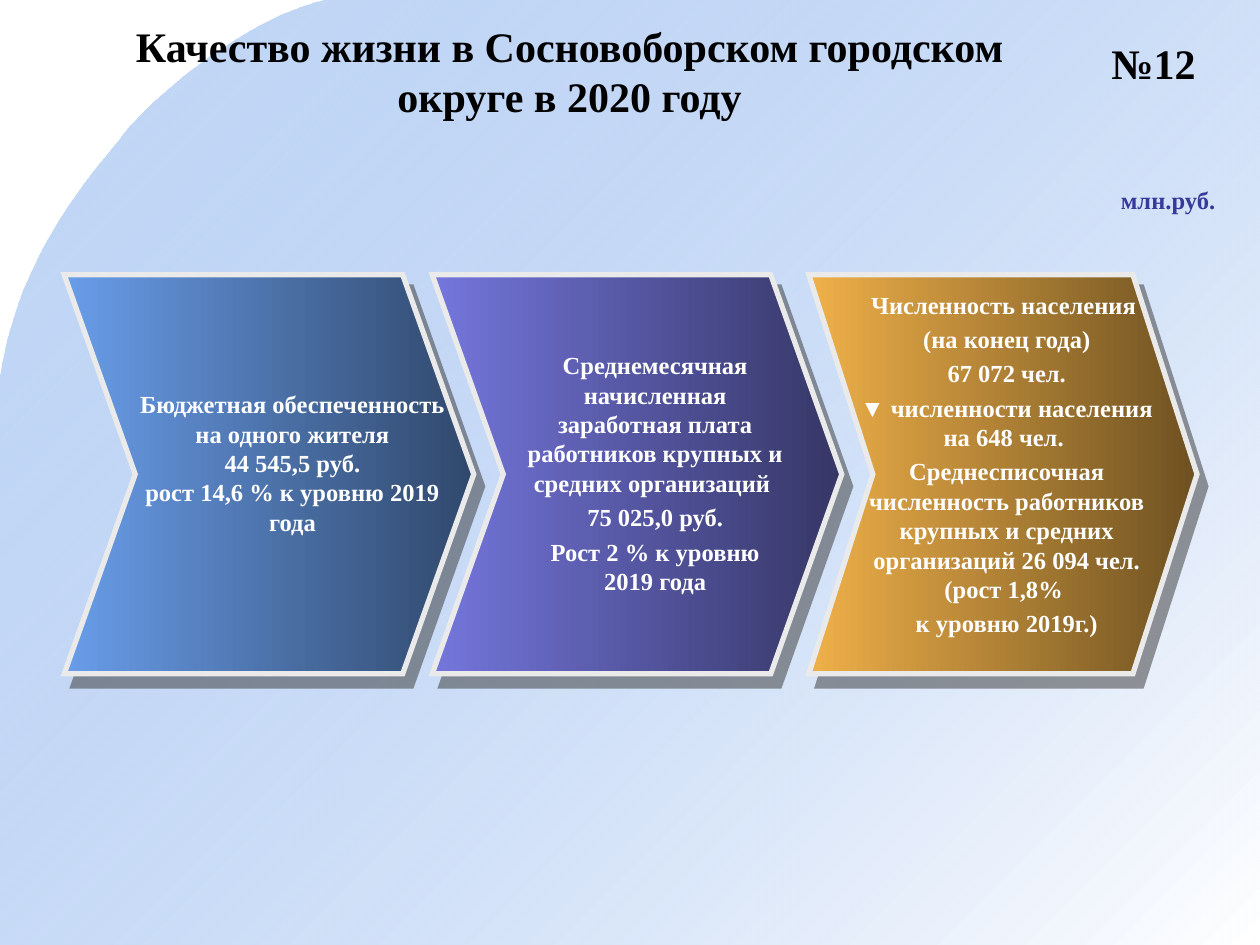
from lxml import etree
from pptx import Presentation
from pptx import util as u
from pptx.dml.color import RGBColor
from pptx.enum import shapes, text
from pptx.oxml.ns import qn

Pt = u.Pt
FONT = "Times New Roman"
WIDTH, HEIGHT = 720, 540
TOP, CHEVRON_HEIGHT = 157, 228

STEPS = [
    {"box": (36.7, TOP, 234, CHEVRON_HEIGHT), "adj": 0.178,
     "colors": ("699DE9", "30486C"), "label": (33.9, 61.9, 193, 92), "gap": 0,
     "lines": ["Бюджетная обеспеченность на одного жителя",
               "44 545,5 руб.",
               "рост 14,6 % к уровню 2019 года"]},
    {"box": (247, TOP, 234, CHEVRON_HEIGHT), "adj": 0.178,
     "colors": ("7476DC", "363666"), "label": (45.3, 39.6, 164.2, 150), "gap": 2.8,
     "lines": ["Среднемесячная начисленная заработная плата работников крупных и средних организаций ",
               "75 025,0 руб.",
               "Рост 2 % к уровню 2019 года"]},
    {"box": (462.2, TOP, 221.8, CHEVRON_HEIGHT), "adj": 0.165,
     "colors": ("EFB049", "6E5121"), "label": (16.6, 5, 193, 211), "gap": 2.8,
     "lines": ["Численность населения ",
               "(на конец года)",
               "67 072 чел.",
               "▼ численности населения на 648 чел. ",
               "Среднесписочная численность работников крупных и средних организаций 26 094 чел. (рост 1,8% ",
               "к уровню 2019г.)"]},
]


def color(value):
    return RGBColor.from_string(value)


def add_child(parent, tag, **attrs):
    return etree.SubElement(parent, qn(tag), {k: str(v) for k, v in attrs.items()})


def fill_gradient(sp, colors, angle):
    sp.fill.gradient()
    sp.fill.gradient_angle = angle
    for stop, value in zip(sp.fill.gradient_stops, colors):
        stop.color.rgb = color(value)


def add_text(s, box, lines, size, value, anchor=text.MSO_ANCHOR.TOP, gap=0):
    tf = s.shapes.add_textbox(*map(Pt, box)).text_frame
    tf.word_wrap = True
    tf.vertical_anchor = anchor
    for i, line in enumerate(lines):
        p = tf.paragraphs[0] if i == 0 else tf.add_paragraph()
        p.text = line
        p.alignment = text.PP_ALIGN.CENTER
        if i and gap:
            p.space_before = Pt(gap)
        p.font.name = FONT
        p.font.size = Pt(size)
        p.font.bold = True
        p.font.color.rgb = color(value)


def bezier(start, c1, c2, end, steps=24):
    for i in range(1, steps + 1):
        t = i / steps
        weights = ((1 - t) ** 3, 3 * t * (1 - t) ** 2, 3 * t * t * (1 - t), t ** 3)
        yield tuple(sum(w * q[axis] for w, q in zip(weights, (start, c1, c2, end)))
                    for axis in (0, 1))


def add_background(s, box):
    x, y, w, h = box
    start = (186, 0)
    curves = [((137, 11.5), (83.5, 60), (70.6, 77)),
              ((57.6, 95), (11.5, 140), (0, 217))]
    points = [start]
    for curve in curves:
        points += bezier(points[-1], *curve)
    points += [(0, h), (w, h), (w, 0)]
    points = [(Pt(x + px), Pt(y + py)) for px, py in points]
    builder = s.shapes.build_freeform(*points[0])
    builder.add_line_segments(points[1:], close=True)
    sp = builder.convert_to_shape()
    sp.shadow.inherit = False
    sp.line.fill.background()
    fill_gradient(sp, ("699DE9", "FFFFFF"), 315)
    first_stop = sp._element.spPr.findall(".//" + qn("a:srgbClr"))[0]
    add_child(first_stop, "a:alpha", val=39000)


def add_header(s, box):
    x, y, w, h = box
    middle = text.MSO_ANCHOR.MIDDLE
    add_text(s, (x + 36, y + 18, 579, 44.6),
             ["Качество жизни в Сосновоборском городском округе в 2020 году"],
             24, "000000", middle)
    add_text(s, (x + w - 121.7, y, 121.7, 71.3), ["№12"], 24, "000000", middle)
    add_text(s, (x + w - 105, y + h - 28, 105, 28), ["млн.руб."], 14, "37399B", middle)


def add_chevron(s, box, adj, colors):
    sp = s.shapes.add_shape(shapes.MSO_SHAPE.CHEVRON, *map(Pt, box))
    sp.adjustments[0] = adj
    fill_gradient(sp, colors, 0)
    sp.line.color.rgb = color("EAEAEA")
    sp.line.width = Pt(3)
    sp.shadow.inherit = False
    spPr = sp._element.spPr
    add_child(spPr.find(qn("a:ln")), "a:miter", lim=800000)
    shadow = add_child(spPr.find(qn("a:effectLst")), "a:outerShdw",
                       dist=Pt(8.6), dir=54 * 60000, algn="ctr", rotWithShape=0)
    add_child(add_child(shadow, "a:srgbClr", val="333333"), "a:alpha", val=50000)


def add_label(s, box, offset, lines, gap):
    dx, dy, w, h = offset
    add_text(s, (box[0] + dx, box[1] + dy, w, h), lines, 14, "FFFFFF", gap=gap)


def main():
    prs = Presentation()
    prs.slide_width, prs.slide_height = Pt(WIDTH), Pt(HEIGHT)
    s = prs.slides.add_slide(prs.slide_layouts[6])
    add_background(s, (0, 0, WIDTH, HEIGHT))
    add_header(s, (0, 0, WIDTH, 128))
    for step in STEPS:
        add_chevron(s, step["box"], step["adj"], step["colors"])
    for step in STEPS:
        add_label(s, step["box"], step["label"], step["lines"], step["gap"])
    prs.save("out.pptx")


if __name__ == "__main__":
    main()
